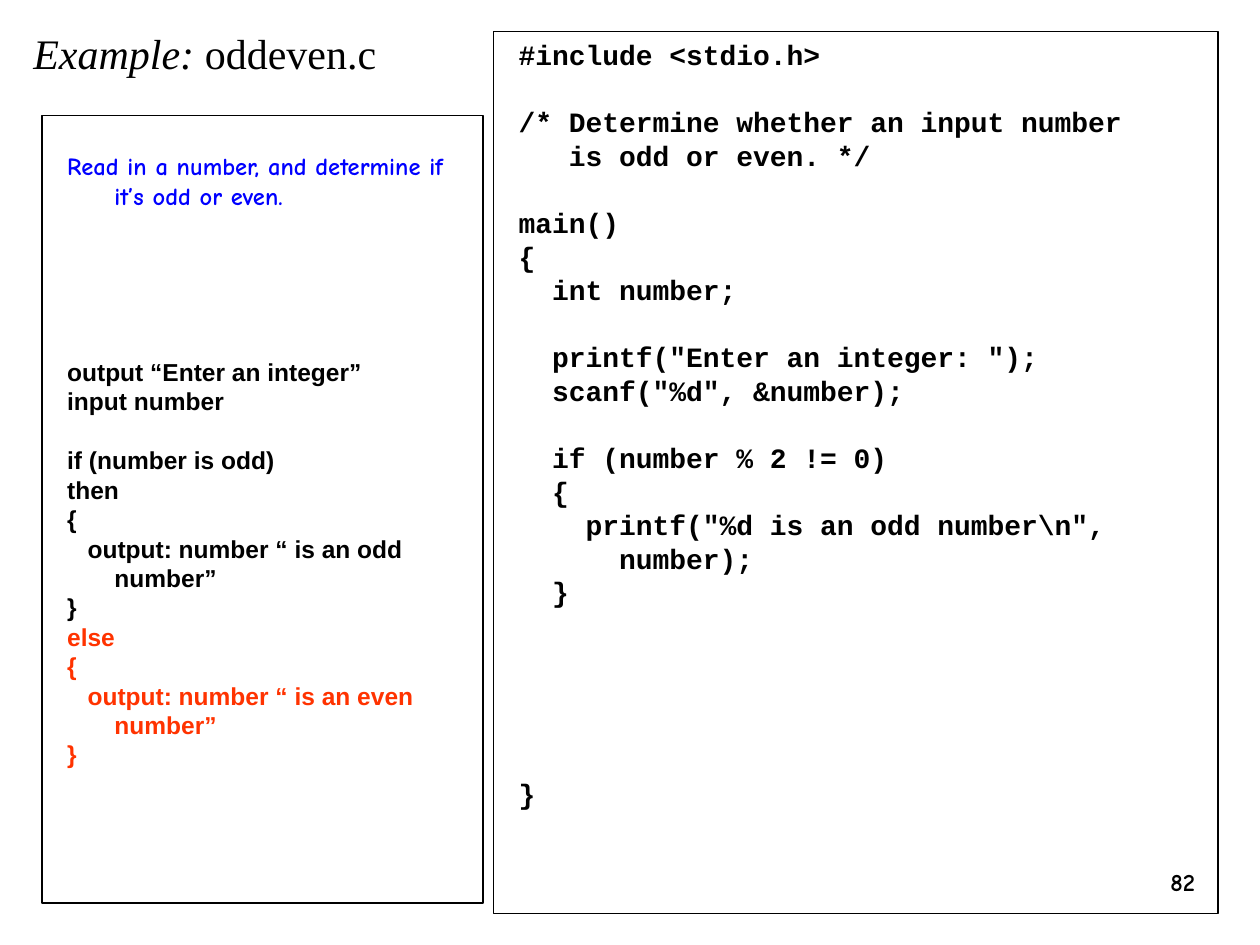
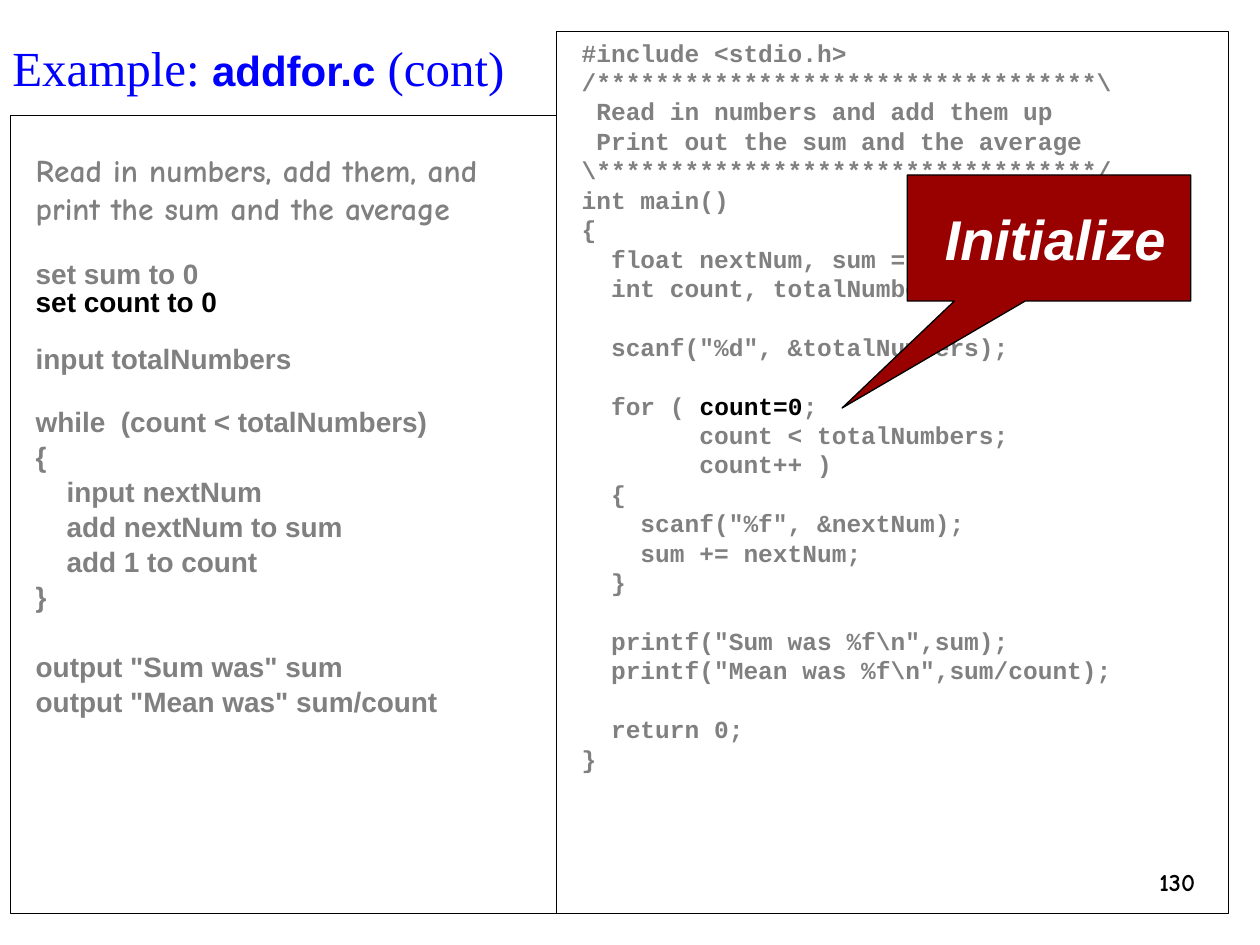
from dataclasses import dataclass, field, replace
from typing import NamedTuple

from pptx import Presentation
from pptx.dml.color import RGBColor
from pptx.enum.shapes import MSO_SHAPE
from pptx.enum.text import MSO_ANCHOR, PP_ALIGN
from pptx.util import Pt

RECTANGLE = MSO_SHAPE.RECTANGLE
CALLOUT = MSO_SHAPE.RECTANGULAR_CALLOUT
LEFT, CENTER, RIGHT = PP_ALIGN.LEFT, PP_ALIGN.CENTER, PP_ALIGN.RIGHT
TOP, MIDDLE = MSO_ANCHOR.TOP, MSO_ANCHOR.MIDDLE


@dataclass(frozen=True)
class Theme:
    black: RGBColor = RGBColor(0x00, 0x00, 0x00)
    white: RGBColor = RGBColor(0xFF, 0xFF, 0xFF)
    blue: RGBColor = RGBColor(0x00, 0x00, 0xFF)
    gray: RGBColor = RGBColor(0x80, 0x80, 0x80)
    orange: RGBColor = RGBColor(0xFF, 0x33, 0x00)
    dark_red: RGBColor = RGBColor(0x99, 0x00, 0x00)
    sans: str = "Arial"
    serif: str = "Times New Roman"
    hand: str = "Comic Neue"
    mono: str = "Courier New"
    small: int = 14
    medium: int = 16
    large: int = 18
    title: int = 24
    big_title: int = 28
    shout: int = 32
    pitch: float = 1.2
    outline: float = 0.75
    hanging: int = 27


THEME = Theme()


class Frame(NamedTuple):
    left: float
    top: float
    width: float
    height: float

    def lengths(self) -> list[Pt]:
        return [Pt(length) for length in self]


class Insets(NamedTuple):
    left: float = 7.2
    top: float = 3.6
    right: float = 7.2
    bottom: float = 3.6


@dataclass(frozen=True)
class Look:
    font: str
    size: int
    color: RGBColor
    bold: bool = False
    italic: bool = False
    tightness: float = 1.0
    before: float = 0.0

    @property
    def line_height(self) -> float:
        return self.size * THEME.pitch * self.tightness


class Span(NamedTuple):
    text: str
    look: Look


@dataclass(frozen=True)
class Para:
    spans: list[Span]
    space_before: float = 0.0


@dataclass(frozen=True)
class Layout:
    """How the text of a box is set."""
    insets: Insets = field(default_factory=Insets)
    align: PP_ALIGN = LEFT
    anchor: MSO_ANCHOR = TOP
    wrap: bool = True
    hanging: int = 0


PANEL_INSETS = Insets(left=14.4)
LISTING = Layout(PANEL_INSETS, hanging=THEME.hanging)
# The outline starts one small line lower than the code listing.
OUTLINE = replace(LISTING, insets=PANEL_INSETS._replace(top=3.6 + THEME.small * THEME.pitch))
NUMBER_FRAME = Frame(600, 492, 90, 36)
NUMBER_LOOK = Look(THEME.hand, THEME.small, THEME.black, bold=True)


def lines(text: str, look: Look, lead: float = 0, accent: str = "") -> list[Para]:
    """Turn each line into a paragraph; empty lines become space before the next one.

    The accent word is set in black.
    """
    paras = []
    gap = lead
    for line in text.strip("\n").split("\n"):
        if not line:
            gap += look.before + look.line_height
            continue
        spans = [Span(line, look)]
        if accent and accent in line:
            start, end = line.split(accent, 1)
            spans = [Span(start, look), Span(accent, replace(look, color=THEME.black)),
                     Span(end, look)]
        paras.append(Para(spans, gap + look.before))
        gap = 0
    return paras


def write(shape, paras: list[Para], layout: Layout) -> None:
    frame = shape.text_frame
    frame.word_wrap = layout.wrap
    frame.vertical_anchor = layout.anchor
    for side, inset in layout.insets._asdict().items():
        setattr(frame, f"margin_{side}", Pt(inset))
    for index, para in enumerate(paras):
        paragraph = frame.add_paragraph() if index else frame.paragraphs[0]
        height = max(span.look.line_height for span in para.spans)
        formats = {"alignment": layout.align, "line_spacing": Pt(round(height, 2)),
                   "space_before": Pt(round(para.space_before, 2))}
        for name, value in formats.items():
            setattr(paragraph, name, value)
        if layout.hanging:
            properties = paragraph._p.get_or_add_pPr()
            properties.set("marL", str(Pt(layout.hanging)))
            properties.set("indent", str(-Pt(layout.hanging)))
        for span in para.spans:
            run = paragraph.add_run()
            run.text = span.text
            look = span.look
            for name, value in {"name": look.font, "size": Pt(look.size),
                                "bold": look.bold, "italic": look.italic}.items():
                setattr(run.font, name, value)
            run.font.color.rgb = look.color


def add_text(page, frame: Frame, spans: list[Span], layout: Layout = Layout()) -> None:
    write(page.shapes.add_textbox(*frame.lengths()), [Para(spans)], layout)


def add_panel(page, frame: Frame, paras: list[Para], layout: Layout,
              kind: MSO_SHAPE = RECTANGLE, fill: RGBColor | None = None):
    panel = page.shapes.add_shape(kind, *frame.lengths())
    panel.shadow.inherit = False
    if fill is None:
        panel.fill.background()
    else:
        panel.fill.solid()
        panel.fill.fore_color.rgb = fill
    panel.line.color.rgb = THEME.black
    panel.line.width = Pt(THEME.outline)
    write(panel, paras, layout)
    return panel


def add_page(deck, number: int):
    page = deck.slides.add_slide(deck.slide_layouts[6])
    add_text(page, NUMBER_FRAME, [Span(str(number), NUMBER_LOOK)], Layout(align=RIGHT))
    return page


ODDEVEN_CODE = r"""
#include <stdio.h>

/* Determine whether an input number
   is odd or even. */

main()
{
  int number;

  printf("Enter an integer: ");
  scanf("%d", &number);

  if (number % 2 != 0)
  {
    printf("%d is an odd number\n",
      number);
  }





}
"""

ODD_STEPS = """
output “Enter an integer”
input number

if (number is odd)
then
{
   output: number “ is an odd number”
}
"""

EVEN_STEPS = """
else
{
   output: number “ is an even number”
}
"""

ADDFOR_CODE = r"""
#include <stdio.h>
/**********************************\
 Read in numbers and add them up
 Print out the sum and the average
\**********************************/
int main()
{
  float nextNum, sum = 0.0;
  int count, totalNumbers;

  scanf("%d", &totalNumbers);

  for ( count=0;
        count < totalNumbers;
        count++ )
  {
    scanf("%f", &nextNum);
    sum += nextNum;
  }

  printf("Sum was %f\n",sum);
  printf("Mean was %f\n",sum/count);

  return 0;
}
"""

LOOP_STEPS = """
while  (count < totalNumbers)
{
    input nextNum
    add nextNum to sum
    add 1 to count
}

output "Sum was" sum
output "Mean was" sum/count
"""


def build_oddeven(deck) -> None:
    page = add_page(deck, 82)
    code = Look(THEME.mono, THEME.medium, THEME.black, bold=True)
    add_panel(page, Frame(282, 18, 414, 504), lines(ODDEVEN_CODE, code), LISTING)

    title = Look(THEME.serif, THEME.title, THEME.black)
    add_text(page, Frame(12, 12, 354, 36),
             [Span("Example: ", replace(title, italic=True)), Span("oddeven.c", title)])

    task = Look(THEME.hand, THEME.small, THEME.blue, bold=True)
    steps = replace(task, font=THEME.sans, color=THEME.black)
    outline = (lines("Read in a number, and determine if it’s odd or even.", task)
               + lines(ODD_STEPS, steps, lead=5 * steps.line_height)
               + lines(EVEN_STEPS, replace(steps, color=THEME.orange)))
    add_panel(page, Frame(24, 66, 252, 450), outline, OUTLINE)


def build_addfor(deck) -> None:
    page = add_page(deck, 130)
    code = Look(THEME.mono, THEME.small, THEME.gray, bold=True)
    add_panel(page, Frame(318, 18, 384, 504),
              lines(ADDFOR_CODE, code, accent="count=0"), LISTING)

    task = Look(THEME.hand, THEME.large, THEME.gray, bold=True)
    steps = replace(task, font=THEME.sans, size=THEME.medium)
    loose = replace(steps, before=0.8)
    tight = replace(loose, tightness=0.8)
    tight_gap = tight.before + tight.line_height
    outline = (lines("Read in numbers, add them, and\nprint the sum and the average", task)
               + lines("set sum to 0", steps, lead=code.line_height)
               + lines("set count to 0\n\ninput totalNumbers", tight, accent="set count to 0")
               + lines(LOOP_STEPS, loose, lead=tight_gap))
    add_panel(page, Frame(6, 66, 312, 456), outline, OUTLINE)

    shout = Look(THEME.sans, THEME.shout, THEME.white, bold=True, italic=True)
    callout = add_panel(page, Frame(518.4, 100, 162, 72), lines("Initialize", shout),
                        Layout(PANEL_INSETS, CENTER, MIDDLE, wrap=False),
                        CALLOUT, THEME.dark_red)
    callout.adjustments[0] = -0.73
    callout.adjustments[1] = 1.35

    title = Look(THEME.serif, THEME.big_title, THEME.blue)
    file_name = replace(title, font=THEME.sans, size=THEME.title, bold=True)
    add_text(page, Frame(0, 18, 342, 41),
             [Span("Example: ", title), Span("addfor.c", file_name), Span(" (cont)", title)])


def main() -> None:
    deck = Presentation()
    deck.slide_width, deck.slide_height = Pt(720), Pt(540)
    build_oddeven(deck)
    build_addfor(deck)
    deck.save("out.pptx")


if __name__ == "__main__":
    main()
